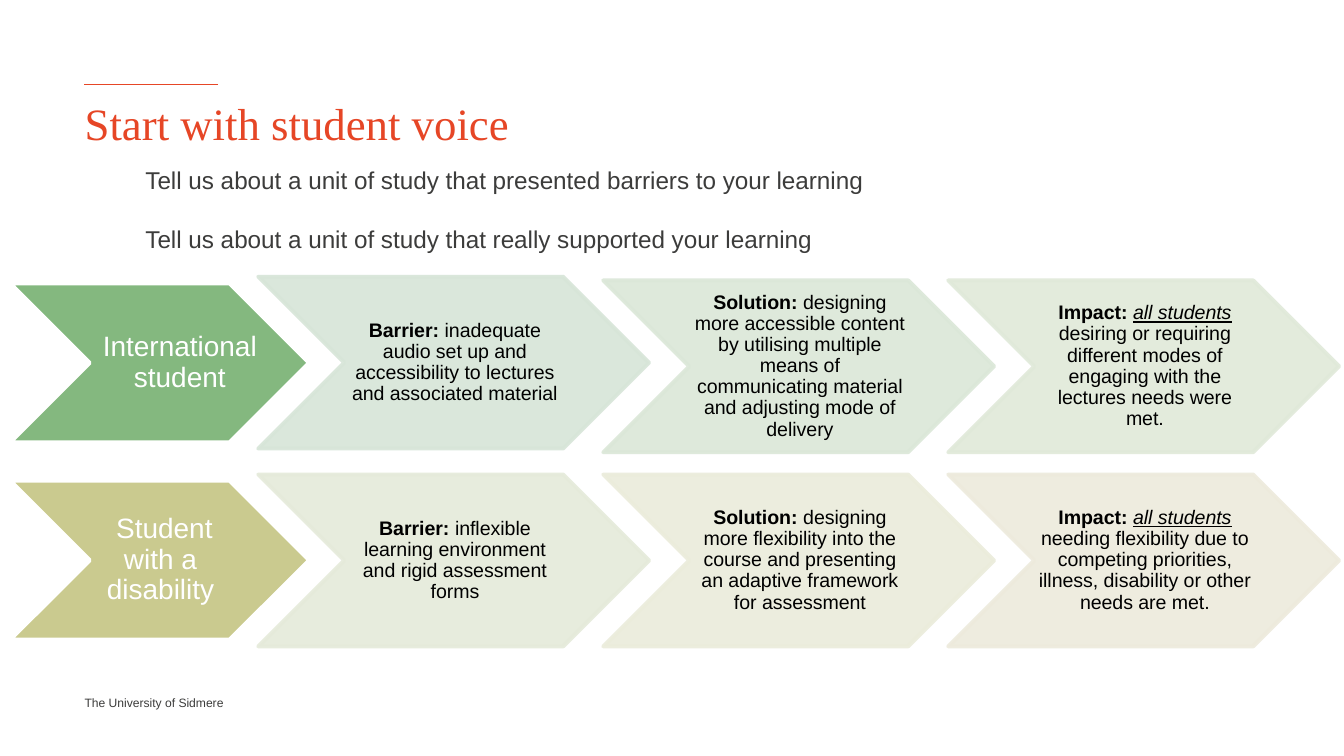
from dataclasses import dataclass
from typing import NamedTuple

from lxml.etree import SubElement
from pptx import Presentation
from pptx.dml.color import RGBColor
from pptx.enum.shapes import MSO_CONNECTOR, MSO_SHAPE
from pptx.enum.text import MSO_ANCHOR, MSO_AUTO_SIZE, PP_ALIGN
from pptx.oxml.ns import qn
from pptx.util import Cm, Pt


@dataclass(frozen=True)
class Theme:
    accent: str = "E64626"
    text: str = "3C3C3B"
    step_text: str = "000000"
    white: str = "FFFFFF"
    serif: str = "Times New Roman"
    sans: str = "Arial"
    title_size: float = 24
    body_size: float = 13
    label_size: float = 15
    step_size: float = 10.5
    footer_size: float = 6.5
    step_opacity: int = 90


class Span(NamedTuple):
    text: str
    bold: bool = False
    stressed: bool = False


class Box(NamedTuple):
    """Left, top, width and height in centimetres."""
    left: float
    top: float
    width: float
    height: float

    def lengths(self):
        return [Cm(v) for v in self]


@dataclass(frozen=True)
class Step:
    top: float
    fill: str
    spans: tuple[Span, ...]


@dataclass(frozen=True)
class Story:
    label: str
    label_top: float
    label_text_width: float
    fill: str
    steps: tuple[Step, ...]


THEME = Theme()
LABEL_LEFT, LABEL_WIDTH, LABEL_HEIGHT = 0.2, 5.64, 3.0
STEP_LEFT, STEP_WIDTH, STEP_HEIGHT, STEP_PITCH = 4.88, 7.39, 3.25, 6.52

PROMPTS = (
    "Tell us about a unit of study that presented barriers to your learning",
    "Tell us about a unit of study that really supported your learning",
)
ALL_STUDENTS = Span("all students", stressed=True)
STORIES = (
    Story("International student", 5.36, 3.35, "84B87F", (
        Step(5.23, "D7E5D8", (
            Span("Barrier:", bold=True),
            Span(" inadequate audio set up and accessibility to lectures "
                 "and associated material"))),
        Step(5.3, "DBE7D8", (
            Span("Solution:", bold=True),
            Span(" designing more accessible content by utilising multiple means of "
                 "communicating material and adjusting mode of delivery"))),
        Step(5.3, "E0E9D9", (
            Span("Impact: ", bold=True), ALL_STUDENTS,
            Span(" desiring or requiring different modes of engaging with the "
                 "lectures needs were met."))),
    )),
    Story(" Student with a disability", 9.09, 2.62, "CACA8F", (
        Step(8.97, "E5EADA", (
            Span("Barrier: ", bold=True),
            Span("inflexible learning environment and rigid assessment forms"))),
        Step(8.97, "EBECDB", (
            Span("Solution: ", bold=True),
            Span("designing more flexibility into the course and presenting an "
                 "adaptive framework for assessment"))),
        Step(8.97, "EDEADC", (
            Span("Impact: ", bold=True), ALL_STUDENTS,
            Span(" needing flexibility due to competing priorities, illness, "
                 "disability or other needs are met."))),
    )),
)


def add_run(p, span: Span, size: float, color: str, font: str = THEME.sans) -> None:
    r = p.add_run()
    r.text = span.text
    r.font.name, r.font.size = font, Pt(size)
    r.font.color.rgb = RGBColor.from_string(color)
    r.font.bold = span.bold
    r.font.italic = r.font.underline = span.stressed


def set_frame(tf, anchor=MSO_ANCHOR.TOP, left: float = 0, edge: float = 0) -> None:
    tf.word_wrap = True
    tf.auto_size = MSO_AUTO_SIZE.NONE
    tf.vertical_anchor = anchor
    tf.margin_left, tf.margin_right = Cm(left), 0
    tf.margin_top = tf.margin_bottom = Cm(edge)


def set_opacity(fill_element, percent: int) -> None:
    for color in fill_element.iter(qn("a:srgbClr")):
        SubElement(color, qn("a:alpha")).set("val", str(percent * 1000))


def add_chevron(slide, box: Box, text_width: float, fill: str, line: str,
                spans: tuple[Span, ...], size: float, color: str,
                opacity: int = 100) -> None:
    """Group a chevron with its text, which starts at the inner notch."""
    group = slide.shapes.add_group_shape()
    sp = group.shapes.add_shape(MSO_SHAPE.CHEVRON, *box.lengths())
    sp.shadow.inherit = False
    sp.fill.solid()
    sp.fill.fore_color.rgb = RGBColor.from_string(fill)
    sp.line.color.rgb = RGBColor.from_string(line)
    sp.line.width = Pt(2)
    if opacity < 100:
        set_opacity(sp._element.spPr, opacity)

    text_box = Box(box.left + box.height / 2, box.top, text_width, box.height)
    tf = group.shapes.add_textbox(*text_box.lengths()).text_frame
    set_frame(tf, MSO_ANCHOR.MIDDLE, left=0.05, edge=0.03)
    p = tf.paragraphs[0]
    p.alignment, p.line_spacing = PP_ALIGN.CENTER, 0.9
    for span in spans:
        add_run(p, span, size, color)


def add_story(slide, story: Story) -> None:
    add_chevron(slide, Box(LABEL_LEFT, story.label_top, LABEL_WIDTH, LABEL_HEIGHT),
                story.label_text_width, story.fill, THEME.white,
                (Span(story.label),), THEME.label_size, THEME.white)
    for i, step in enumerate(story.steps):
        box = Box(STEP_LEFT + i * STEP_PITCH, step.top, STEP_WIDTH, STEP_HEIGHT)
        add_chevron(slide, box, STEP_WIDTH - STEP_HEIGHT, step.fill, step.fill,
                    step.spans, THEME.step_size, THEME.step_text, THEME.step_opacity)


def add_title(slide, text: str) -> None:
    title = slide.shapes.title
    title.left, title.top, title.width, title.height = Box(1.6, 1.8, 22.2, 1.02).lengths()
    set_frame(title.text_frame)
    p = title.text_frame.paragraphs[0]
    p.alignment = PP_ALIGN.LEFT
    add_run(p, Span(text), THEME.title_size, THEME.accent, THEME.serif)


def add_lines(slide, box: Box, lines: tuple[str, ...], size: float, gap: float = 0) -> None:
    tf = slide.shapes.add_textbox(*box.lengths()).text_frame
    set_frame(tf)
    for i, line in enumerate(lines):
        p = tf.add_paragraph() if i else tf.paragraphs[0]
        p.space_before = Pt(gap if i else 0)
        add_run(p, Span(line), size, THEME.text)


def add_rule(slide) -> None:
    rule = slide.shapes.add_connector(
        MSO_CONNECTOR.STRAIGHT, Cm(4.12), Cm(1.6), Cm(1.58), Cm(1.6))
    rule.line.color.rgb = RGBColor.from_string(THEME.accent)
    rule.line.width = Pt(0.75)
    SubElement(rule._element.spPr, qn("a:effectLst"))


def main() -> None:
    prs = Presentation()
    prs.slide_width, prs.slide_height = Cm(25.4), Cm(14.29)
    slide = prs.slides.add_slide(prs.slide_layouts.get_by_name("Title Only"))
    add_rule(slide)
    add_lines(slide, Box(1.6, 13.14, 3.2, 0.33), ("The University of Sidmere",),
              THEME.footer_size)
    add_title(slide, "Start with student voice")
    add_lines(slide, Box(2.75, 3.12, 18.54, 1.27), PROMPTS, THEME.body_size, gap=16)
    for story in STORIES:
        add_story(slide, story)
    prs.save("out.pptx")


if __name__ == "__main__":
    main()
